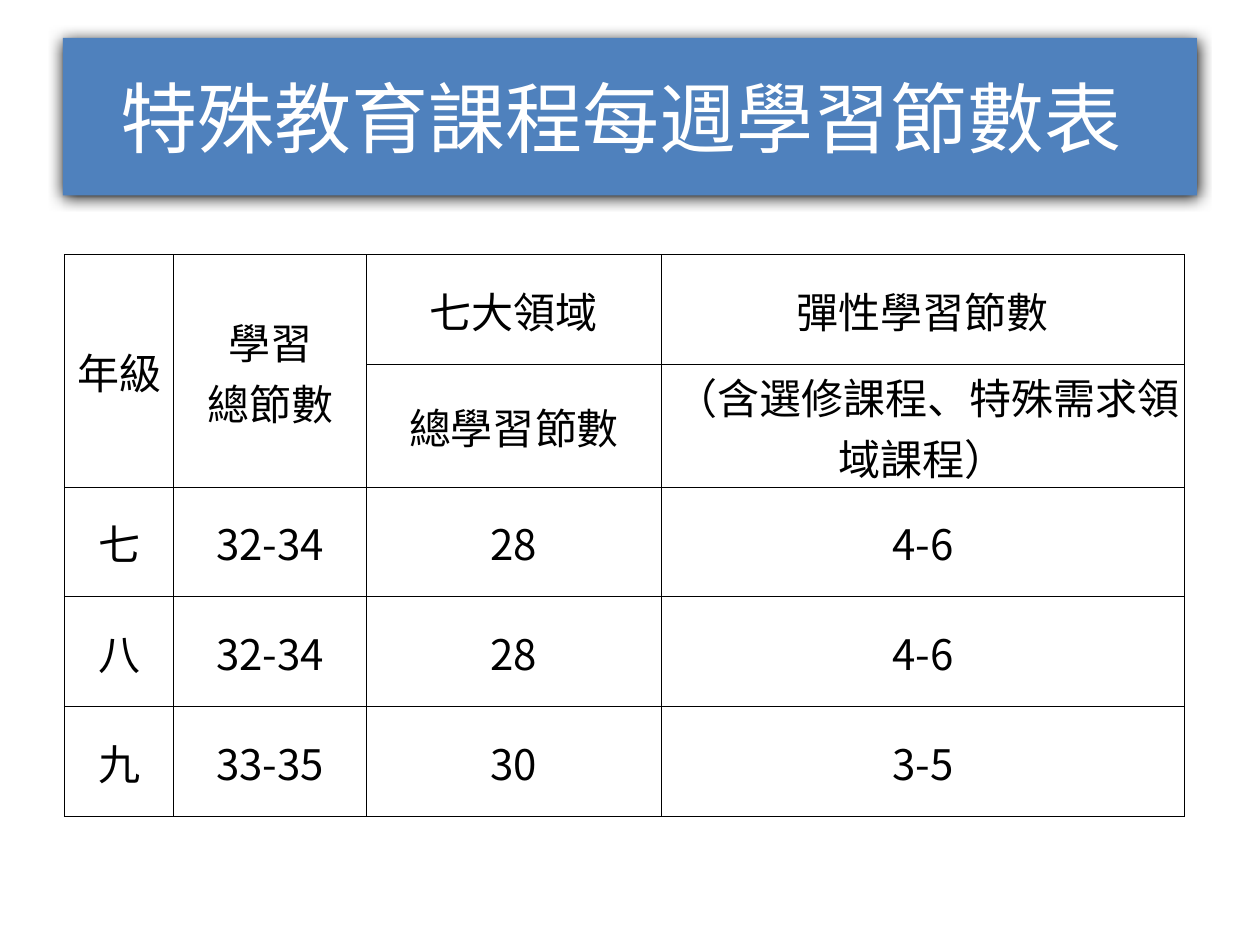
from lxml import etree
from pptx import Presentation, util as u
from pptx.dml.color import RGBColor
from pptx.enum import shapes, text
from pptx.oxml import ns

WIDTH, HEIGHT = 10, 7.5
SIMPLIFIED, TRADITIONAL = "Noto Sans CJK SC", "Noto Sans CJK TC"
COLUMNS = [0.87, 1.53, 2.34, 4.15]
ROWS = [
    ["年級", "學習\n總節數", "七大領域", "彈性學習節數"],
    ["", "", "總學習節數", " （含選修課程、特殊需求領域課程）"],
    ["七", "32-34", "28", "4-6"],
    ["八", "32-34", "28", "4-6"],
    ["九", "33-35", "30", "3-5"],
]
HEADER_ROWS = 2


def color(value):
    return RGBColor.from_string(value)


def add_element(parent, tag, **attributes):
    return etree.SubElement(parent, ns.qn(tag), attributes)


def write(frame, content, size=24, font=SIMPLIFIED, ink="000000"):
    frame.word_wrap = True
    for index, line in enumerate(content.split("\n")):
        para = frame.add_paragraph() if index else frame.paragraphs[0]
        para.alignment = text.PP_ALIGN.CENTER
        span = para.add_run()
        span.text = line
        span.font.size = u.Pt(size)
        span.font.name = font
        span.font.color.rgb = color(ink)
        add_element(span.font._element, "a:ea", typeface=font)


def add_shadow(shape, blur, distance, angle):
    shape.shadow.inherit = False
    effects = shape._element.spPr.find(ns.qn("a:effectLst"))
    shadow = add_element(effects, "a:outerShdw", blurRad=str(u.Pt(blur)),
                         dist=str(u.Pt(distance)), dir=str(angle * 60000),
                         algn="t", rotWithShape="0")
    add_element(shadow, "a:srgbClr", val="000000")


def add_borders(cell, width=0.5, ink="000000"):
    properties = cell._tc.get_or_add_tcPr()
    for index, side in enumerate(("a:lnL", "a:lnR", "a:lnT", "a:lnB")):
        line = add_element(properties, side, w=str(u.Pt(width)))
        fill = add_element(line, "a:solidFill")
        add_element(fill, "a:srgbClr", val=ink)
        properties.insert(index, line)


def add_banner(page, left, top, width, height):
    box = page.shapes.add_shape(shapes.MSO_SHAPE.RECTANGLE, left, top, width, height)
    box.fill.solid()
    box.fill.fore_color.rgb = color("4F81BD")
    box.line.fill.background()
    add_shadow(box, blur=8.5, distance=1, angle=90)
    box.text_frame.vertical_anchor = text.MSO_ANCHOR.MIDDLE
    write(box.text_frame, "特殊教育課程每週學習節數表 ", size=44, ink="FFFFFF")


def add_timetable(page, left, top, width, height):
    table = page.shapes.add_table(len(ROWS), len(COLUMNS), left, top, width, height).table
    table.first_row = table.horz_banding = False
    for column, share in zip(table.columns, COLUMNS):
        column.width = int(width * share / sum(COLUMNS))
    for column in range(2):
        table.cell(0, column).merge(table.cell(HEADER_ROWS - 1, column))
    for row, entries in enumerate(ROWS):
        for column, entry in enumerate(entries):
            cell = table.cell(row, column)
            cell.fill.background()
            add_borders(cell)
            cell.vertical_anchor = text.MSO_ANCHOR.MIDDLE
            cell.margin_left = cell.margin_right = cell.margin_top = u.Inches(0.01)
            cell.margin_bottom = 0
            if entry:
                write(cell.text_frame, entry,
                      font=TRADITIONAL if row < HEADER_ROWS else SIMPLIFIED)


def main():
    deck = Presentation()
    deck.slide_width, deck.slide_height = u.Inches(WIDTH), u.Inches(HEIGHT)
    page = deck.slides.add_slide(deck.slide_layouts[6])
    add_banner(page, *map(u.Inches, (0.05 * WIDTH, 0.04 * HEIGHT, 0.9 * WIDTH, 1.25)))
    add_timetable(page, *map(u.Inches, (0.51, 2.02, sum(COLUMNS), 0.87 * len(ROWS))))
    deck.save("out.pptx")


if __name__ == "__main__":
    main()
